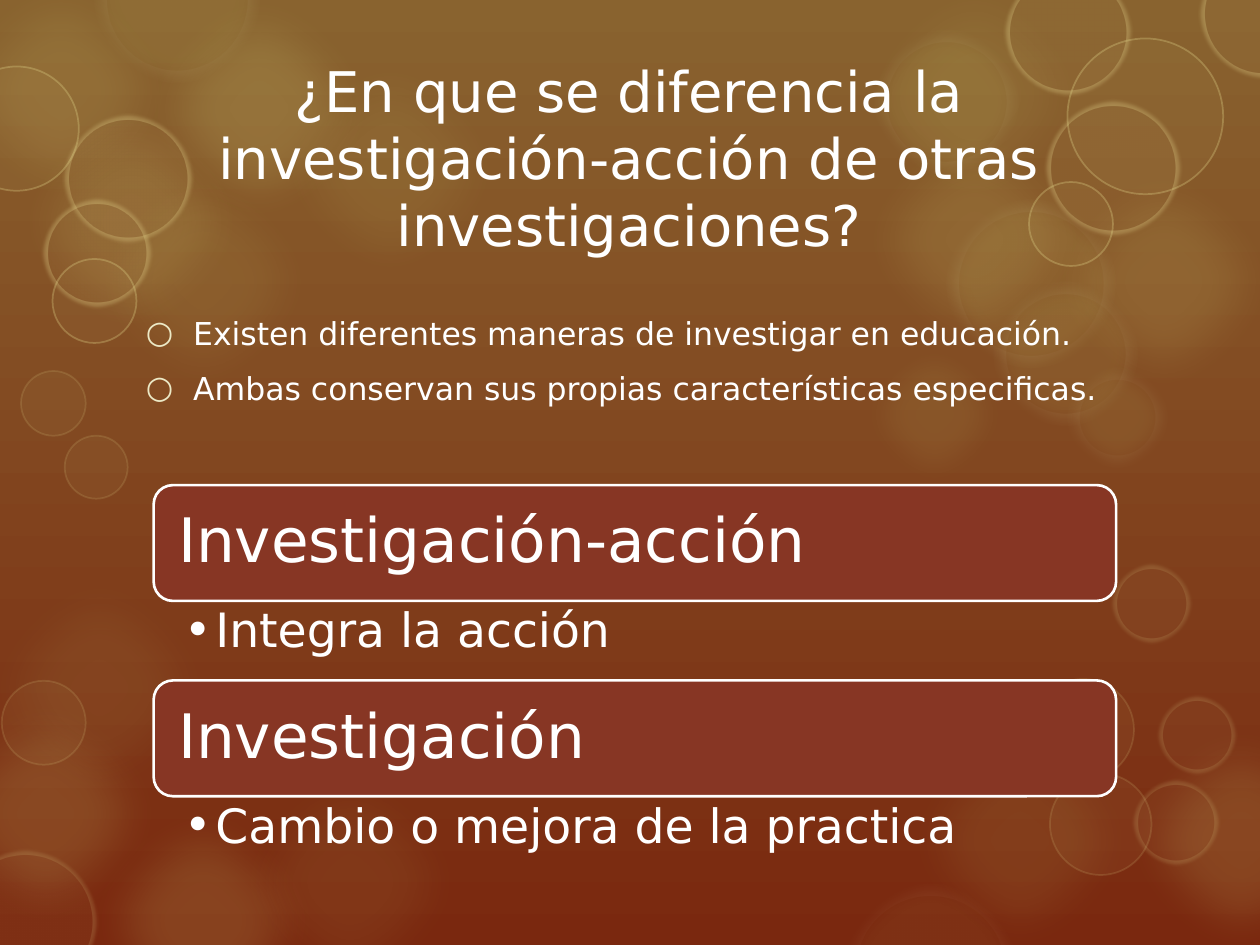
from lxml.etree import SubElement
from pptx import Presentation
from pptx.dml.color import RGBColor
from pptx.enum.shapes import MSO_SHAPE as Kind
from pptx.enum.text import MSO_ANCHOR as Anchor, PP_ALIGN as Align
from pptx.oxml.ns import qn
from pptx.util import Pt

FONT = "DejaVu Sans"
WHITE = RGBColor(0xFF, 0xFF, 0xFF)
OCHRE = RGBColor(0x89, 0x63, 0x2F)
RUST = RGBColor(0x7A, 0x28, 0x0F)
BRICK = RGBColor(0x87, 0x36, 0x24)
OLIVE = RGBColor(0xD1, 0xCA, 0x75)
STRAW = RGBColor(0xE3, 0xD8, 0x8C)
CREAM = RGBColor(0xF4, 0xF2, 0xDD)
PALE = RGBColor(0xEC, 0xE9, 0xC6)

HAZE = [
    (-18, 318, 150, 8), (41, 86, 150, 10), (148, 22, 150, 10),
    (41, 451, 150, 16), (-40, -23, 150, 14), (73, -13, 150, 20),
    (0, 52, 150, 15), (482, -21, 150, 10), (590, 86, 150, 15),
    (634, 405, 150, 16), (-49, 390, 150, 16), (482, 62, 150, 15),
    (508, 405, 150, 10), (125, 429, 150, 8), (486, 189, 96, 10),
]
GLOW = [
    (500, 17, 82, 10), (541, 114, 96, 10), (568, 161, 82, 10),
    (610, 210, 57, 10), (54, -47, 94, 10), (482, 505, 99, 6),
]
RINGS = [
    (1, 389, 48, 1, 15), (-26, 486, 81, 5, 15), (-26, 38, 71, 1, 30),
    (37, 66, 72, 5, 30), (25, 114, 61, 5, 30), (30, 148, 48, 1, 30),
    (575, -17, 71, 5, 30), (686, -28, 72, 5, 30), (610, 22, 89, 1, 30),
    (598, 58, 76, 5, 30), (588, 104, 48, 1, 30), (600, 442, 58, 1, 15),
    (590, 388, 58, 1, 15), (648, 446, 48, 5, 15), (636, 323, 44, 5, 15),
    (662, 398, 44, 5, 15), (12, 212, 37, 1, 15), (37, 249, 36, 1, 15),
]


def fade(fill, alpha):
    for tone in fill._xPr.iter(qn("a:srgbClr")):
        SubElement(tone, qn("a:alpha"), val=str(alpha * 1000))


def bubble(shapes, x, y, size, tone, alpha, soft=0, edge=None, width=0, clear=0):
    shape = shapes.add_shape(Kind.OVAL, Pt(x), Pt(y), Pt(size), Pt(size))
    shape.shadow.inherit = False
    shape.fill.solid()
    shape.fill.fore_color.rgb = tone
    fade(shape.fill, alpha)
    if edge is None:
        shape.line.fill.background()
    else:
        shape.line.width = Pt(width)
        shape.line.color.rgb = edge
        fade(shape.line.fill, clear)
    if soft:
        effects = shape._element.spPr.find(qn("a:effectLst"))
        SubElement(effects, qn("a:softEdge"), rad=str(Pt(soft)))


def backdrop(slide):
    fill = slide.background.fill
    fill.gradient()
    fill.gradient_angle = 270
    for place, (stop, tone) in enumerate(zip(fill.gradient_stops, (OCHRE, RUST))):
        stop.color.rgb = tone
        stop.position = place
    for x, y, size, alpha in HAZE:
        bubble(slide.shapes, x, y, size, OLIVE, alpha, soft=size / 6)
    for x, y, size, alpha in GLOW:
        bubble(slide.shapes, x, y, size, OLIVE, alpha, soft=10,
               edge=CREAM, width=14, clear=6 if alpha == 10 else 4)
    for x, y, size, width, clear in RINGS:
        bubble(slide.shapes, x, y, size, STRAW, 5, soft=0 if width == 1 else 2.5,
               edge=STRAW, width=width, clear=clear)


def bullet(para, mark, indent, tone):
    props = para._p.get_or_add_pPr()
    props.set("marL", str(Pt(indent)))
    props.set("indent", str(-Pt(indent)))
    if tone is not None:
        SubElement(SubElement(props, qn("a:buClr")), qn("a:srgbClr"), val=str(tone))
    SubElement(props, qn("a:buFont"), typeface=FONT)
    SubElement(props, qn("a:buChar"), char=mark)


def write(shapes, text, box, size=18, align=Align.LEFT, anchor=Anchor.MIDDLE,
          pads=(7.2, 3.6, 7.2, 3.6), lead=None, before=0, after=0,
          mark=None, indent=0, tint=None):
    frame = shapes.add_textbox(*map(Pt, box)).text_frame
    frame.word_wrap = True
    frame.vertical_anchor = anchor
    frame.margin_left, frame.margin_top, frame.margin_right, frame.margin_bottom = map(Pt, pads)
    for i, line in enumerate(text.split("\n")):
        para = frame.paragraphs[0] if i == 0 else frame.add_paragraph()
        para.alignment = align
        para.space_before, para.space_after = Pt(before), Pt(after)
        if lead:
            para.line_spacing = lead
        if mark:
            bullet(para, mark, indent, tint)
        run = para.add_run()
        run.text = line
        run.font.name, run.font.size = FONT, Pt(size)
        run.font.color.rgb = WHITE


def topic(shapes, box, head, note):
    x, y, wide, high = box
    bar = 66.2
    panel = shapes.add_shape(Kind.ROUNDED_RECTANGLE, Pt(x), Pt(y), Pt(wide), Pt(bar))
    panel.shadow.inherit = False
    panel.fill.solid()
    panel.fill.fore_color.rgb = BRICK
    panel.line.color.rgb = WHITE
    panel.line.width = Pt(1.5)
    gap = 3.2
    write(shapes, head, (x + gap, y + gap, wide - 2 * gap, bar - 2 * gap), size=35,
          pads=(10.8,) * 4, lead=0.9, after=12.25)
    write(shapes, note, (x, y + bar, wide, high - bar), size=27, anchor=Anchor.TOP,
          pads=(17.3, 3.6, 19.4, 3.6), lead=0.9, after=5.4, mark="•", indent=18)


def topics(shapes, box, items):
    x, y, wide, high = box
    step = high / len(items)
    for i, (head, note) in enumerate(items):
        topic(shapes, (x, y + i * step, wide, step), head, note)


def main():
    deck = Presentation()
    deck.slide_width, deck.slide_height = Pt(720), Pt(540)
    slide = deck.slides.add_slide(deck.slide_layouts[6])
    backdrop(slide)
    shapes = slide.shapes
    write(shapes, "¿En que se diferencia la investigación-acción de otras investigaciones?",
          (79.2, 53.3, 560.9, 72.7), size=32, align=Align.CENTER)
    write(shapes, "Existen diferentes maneras de investigar en educación.\n"
          "Ambas conservan sus propias características especificas.",
          (76.3, 122.4, 581, 167), before=3.6, after=6, mark="○", indent=27, tint=PALE)
    topics(shapes, (87.8, 277.2, 550, 223.2), [
        ("Investigación-acción", "Integra la acción"),
        ("Investigación", "Cambio o mejora de la practica"),
    ])
    deck.save("out.pptx")


if __name__ == "__main__":
    main()
